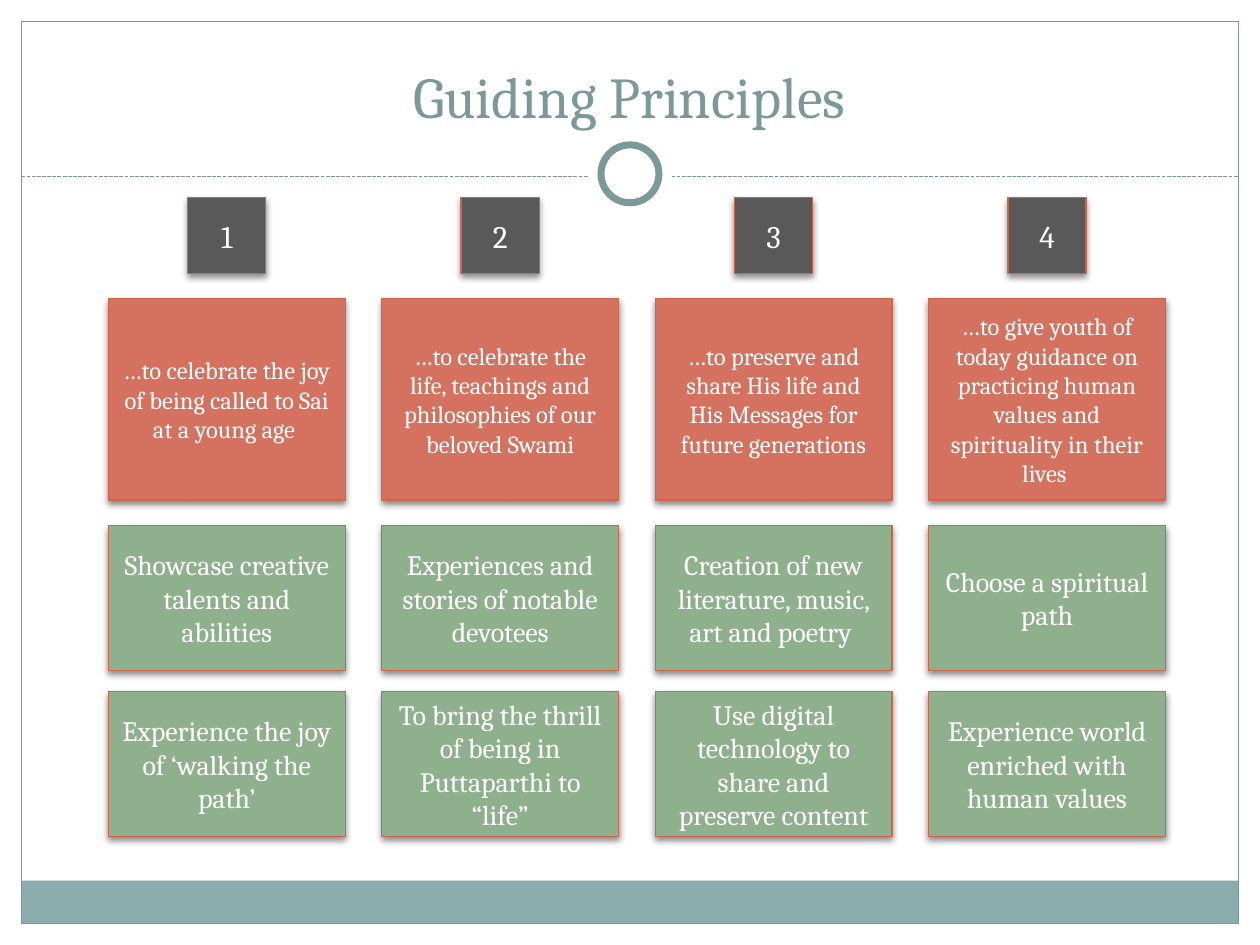
from lxml import etree
from pptx import Presentation
from pptx.dml.color import RGBColor
from pptx.enum.dml import MSO_LINE
from pptx.enum.shapes import MSO_CONNECTOR, MSO_SHAPE
from pptx.enum.text import MSO_ANCHOR, PP_ALIGN
from pptx.oxml import parse_xml
from pptx.oxml.ns import qn
from pptx.util import Inches, Pt

RECTANGLE, OVAL = MSO_SHAPE.RECTANGLE, MSO_SHAPE.OVAL
STRAIGHT, DASH = MSO_CONNECTOR.STRAIGHT, MSO_LINE.SQUARE_DOT
CENTER, MIDDLE, BOTTOM = PP_ALIGN.CENTER, MSO_ANCHOR.MIDDLE, MSO_ANCHOR.BOTTOM

TITLE = "Guiding Principles"
PRINCIPLES = [
    ("1", "…to celebrate the joy of being called to Sai at a young age ",
     "Showcase creative talents and abilities",
     "Experience the joy of ‘walking the path’"),
    ("2", "…to celebrate the life, teachings and philosophies of our beloved Swami",
     "Experiences and stories of notable devotees",
     "To bring the thrill of being in Puttaparthi to “life”"),
    ("3", "…to preserve and share His life and His Messages for future generations",
     "Creation of new literature, music, art and poetry ",
     "Use digital technology to share and preserve content"),
    ("4", "…to give youth of today guidance on practicing human values and spirituality in their lives ",
     "Choose a spiritual path",
     "Experience world enriched with human values"),
]

THEME = {
    "font": "Cambria", "white": "FFFFFF", "frame": "7C999A", "band": "8CADAE",
    "number": "595959", "principle": "D4725F", "action": "8FB08C", "outline": "D16349",
    "title_size": 33, "number_size": 18, "principle_size": 14, "action_size": 16,
    "thin": 0.75, "ring": 4,
}

WIDTH, HEIGHT = 10, 7.5
MARGIN = 0.17
BAND_HEIGHT = 0.34
DIVIDER_TOP = 1.4
RING_CENTER = 1.38
COLUMN_LEFT, COLUMN_STEP, COLUMN_WIDTH = 0.86, 2.17, 1.88
ROWS = [
    (1.57, 0.62, 0.6, "number"),
    (2.37, COLUMN_WIDTH, 1.6, "principle"),
    (4.17, COLUMN_WIDTH, 1.15, "action"),
    (5.49, COLUMN_WIDTH, 1.15, "action"),
]
SHADOW = (
    '<a:outerShdw xmlns:a="http://schemas.openxmlformats.org/drawingml/2006/main" '
    'blurRad="50800" dist="25400" dir="5400000" rotWithShape="0">'
    '<a:srgbClr val="000000"><a:alpha val="45000"/></a:srgbClr></a:outerShdw>'
)


def color(name):
    return RGBColor.from_string(THEME[name])


def add_box(slide, kind, left, top, width, height, fill=None, line=None, weight="thin"):
    shape = slide.shapes.add_shape(
        kind, Inches(left), Inches(top), Inches(width), Inches(height))
    if fill:
        shape.fill.solid()
        shape.fill.fore_color.rgb = color(fill)
    else:
        shape.fill.background()
    if line:
        shape.line.color.rgb = color(line)
        shape.line.width = Pt(THEME[weight])
    else:
        shape.line.fill.background()
    shape.shadow.inherit = False
    return shape


def write_text(shape, text, size, ink, anchor):
    frame = shape.text_frame
    frame.word_wrap = True
    frame.vertical_anchor = anchor
    paragraph = frame.paragraphs[0]
    paragraph.alignment = CENTER
    run = paragraph.add_run()
    run.text = text
    run.font.name = THEME["font"]
    run.font.size = Pt(THEME[size])
    run.font.color.rgb = color(ink)


def add_circle(slide, size, **style):
    add_box(slide, OVAL, (WIDTH - size) / 2, RING_CENTER - size / 2,
            size, size, fill="white", **style)


def add_frame(slide):
    inner_width = WIDTH - 2 * MARGIN
    add_box(slide, RECTANGLE, MARGIN, HEIGHT - MARGIN - BAND_HEIGHT,
            inner_width, BAND_HEIGHT, fill="band")
    add_box(slide, RECTANGLE, MARGIN, MARGIN, inner_width, HEIGHT - 2 * MARGIN, line="frame")
    divider = slide.shapes.add_connector(
        STRAIGHT, Inches(MARGIN), Inches(DIVIDER_TOP),
        Inches(WIDTH - MARGIN), Inches(DIVIDER_TOP))
    divider.line.color.rgb = color("frame")
    divider.line.width = Pt(THEME["thin"])
    divider.line.dash_style = DASH
    etree.SubElement(divider._element.spPr, qn("a:effectLst"))
    add_circle(slide, 0.67)
    add_circle(slide, 0.46, line="frame", weight="ring")


def add_title(slide):
    title = slide.shapes.add_textbox(Inches(0.33), Inches(0.25), Inches(9.33), Inches(0.83))
    write_text(title, TITLE, "title_size", "frame", BOTTOM)


def add_principles(slide):
    for column, texts in enumerate(PRINCIPLES):
        center = COLUMN_LEFT + column * COLUMN_STEP + COLUMN_WIDTH / 2
        for text, (top, width, height, role) in zip(texts, ROWS):
            card = add_box(slide, RECTANGLE, center - width / 2, top, width, height,
                           fill=role, line="outline")
            card._element.spPr.find(qn("a:effectLst")).append(parse_xml(SHADOW))
            write_text(card, text, role + "_size", "white", MIDDLE)


def main():
    presentation = Presentation()
    presentation.slide_width, presentation.slide_height = Inches(WIDTH), Inches(HEIGHT)
    slide = presentation.slides.add_slide(presentation.slide_layouts[6])
    add_frame(slide)
    add_title(slide)
    add_principles(slide)
    presentation.save("out.pptx")


if __name__ == "__main__":
    main()
